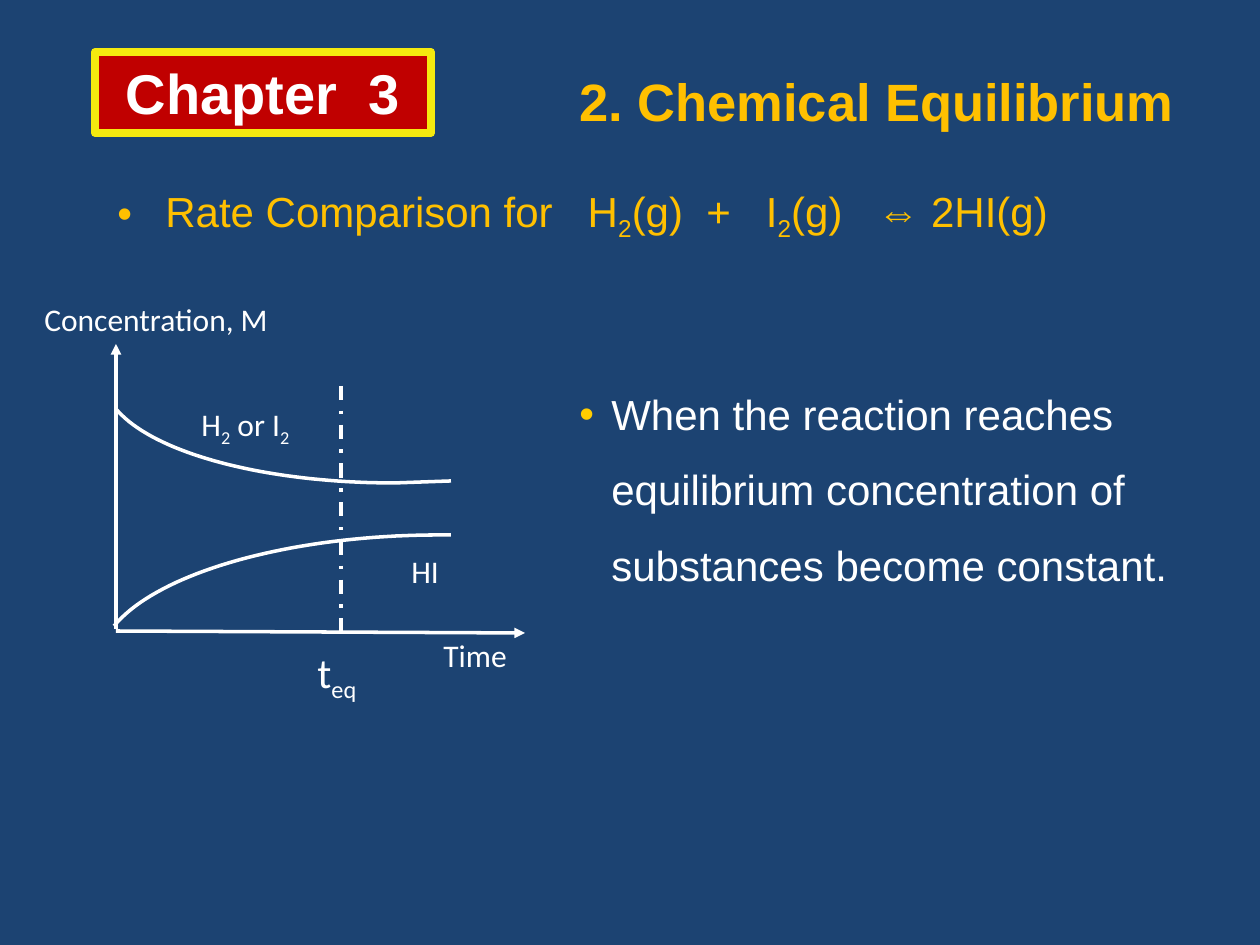
from lxml import etree
from pptx import Presentation
from pptx.dml.color import RGBColor
from pptx.enum.dml import MSO_LINE
from pptx.enum.shapes import MSO_CONNECTOR, MSO_SHAPE
from pptx.enum.text import MSO_ANCHOR, PP_ALIGN
from pptx.oxml.ns import qn
from pptx.util import Pt

PX = 914400 / 126
STRAIGHT = MSO_CONNECTOR.STRAIGHT
RECT = MSO_SHAPE.RECTANGLE
DASH_DOT = MSO_LINE.DASH_DOT
MIDDLE = MSO_ANCHOR.MIDDLE
CENTER = PP_ALIGN.CENTER
COLORS = {
    "navy": "1C4372",
    "red": "C00000",
    "yellow": "F5EA0F",
    "gold": "FFC000",
    "bullet": "FFCC00",
    "white": "FFFFFF",
}
RGB = {name: RGBColor.from_string(value) for name, value in COLORS.items()}


def px(*values):
    return [round(v * PX) for v in values]


def add_runs(p, parts, size, font, color, bold=False):
    for i, part in enumerate(parts):
        r = p.add_run()
        r.text = part
        r.font.size = Pt(size)
        r.font.name = font
        r.font.bold = bold
        r.font.color.rgb = RGB[color]
        if i % 2:
            r.font._element.set("baseline", "-25000")


prs = Presentation()
prs.slide_width, prs.slide_height = px(1260, 945)
s = prs.slides.add_slide(prs.slide_layouts[6])
s.background.fill.solid()
s.background.fill.fore_color.rgb = RGB["navy"]

sp = s.shapes.add_shape(RECT, *px(95, 52, 336, 81))
sp.shadow.inherit = False
sp.fill.solid()
sp.fill.fore_color.rgb = RGB["red"]
sp.line.color.rgb = RGB["yellow"]
sp.line.width = Pt(4.5)
tf = sp.text_frame
tf.vertical_anchor = MIDDLE
p = tf.paragraphs[0]
p.alignment = CENTER
add_runs(p, ["Chapter  3"], 32, "Arial", "white", True)

sp = s.shapes.add_textbox(*px(567, 63, 693, 77))
sp.text_frame.word_wrap = True
add_runs(sp.text_frame.paragraphs[0], ["2. Chemical Equilibrium"], 30, "Arial", "gold", True)

reaction = ["Rate Comparison for   H", "2", "(g)  +   I", "2", "(g)   ⇔ 2HI(g)"]
statement = ["When the reaction reaches equilibrium concentration of substances become constant."]
bullets = [
    ((105, 179, 1071, 105), reaction, "gold", "gold", 48, 1, 4.8),
    ((567, 357, 640, 242), statement, "white", "bullet", 32, 1.5, 0),
]
for box, parts, color, bullet_color, indent, spacing, before in bullets:
    sp = s.shapes.add_textbox(*px(*box))
    tf = sp.text_frame
    tf.word_wrap = True
    p = tf.paragraphs[0]
    p.line_spacing = spacing
    p.space_before = Pt(before)
    pPr = p._p.get_or_add_pPr()
    margin = px(indent)[0]
    pPr.set("marL", str(margin))
    pPr.set("indent", str(-margin))
    buClr = etree.SubElement(pPr, qn("a:buClr"))
    etree.SubElement(buClr, qn("a:srgbClr"), val=COLORS[bullet_color])
    etree.SubElement(pPr, qn("a:buFont"), typeface="Arial")
    etree.SubElement(pPr, qn("a:buChar"), char="•")
    add_runs(p, parts, 24, "Arial", color)

lines = [
    ((116, 631, 525, 633), True),
    ((116, 629, 116, 344), True),
    ((341, 386, 341, 638 - 7), False),
]
for ends, is_axis in lines:
    cxn = s.shapes.add_connector(STRAIGHT, *px(*ends))
    cxn.line.color.rgb = RGB["white"]
    cxn.line.width = Pt(2)
    if is_axis:
        etree.SubElement(cxn.line._get_or_add_ln(), qn("a:tailEnd"), type="triangle")
    else:
        cxn.line.dash_style = DASH_DOT
    etree.SubElement(cxn._element.spPr, qn("a:effectLst"))

STEPS = 40
curves = [
    ([(114, 626), (159, 572), (291, 535), (440, 535)], (451, 535)),
    ([(116, 409), (154, 454), (267, 483), (394, 483)], (451, 481)),
]
for controls, end in curves:
    points = []
    for i in range(STEPS + 1):
        t = i / STEPS
        weights = ((1 - t) ** 3, 3 * t * (1 - t) ** 2, 3 * t**2 * (1 - t), t**3)
        points.append(px(*(sum(w * c for w, c in zip(weights, axis)) for axis in zip(*controls))))
    points.append(px(*end))
    fb = s.shapes.build_freeform(*points[0])
    fb.add_line_segments(points[1:], close=False)
    sp = fb.convert_to_shape()
    sp.shadow.inherit = False
    sp.fill.background()
    sp.line.color.rgb = RGB["white"]
    sp.line.width = Pt(2)

labels = [
    ((32, 294, 252, 50), ["Concentration, M"], 18),
    ((431, 630, 89, 50), ["Time"], 18),
    ((189, 399, 117, 50), ["H", "2", " or I", "2"], 18),
    ((399, 546, 53, 50), ["HI"], 18),
    ((305, 640, 68, 63), ["t", "eq"], 24),
]
for box, parts, size in labels:
    sp = s.shapes.add_textbox(*px(*box))
    sp.text_frame.word_wrap = False
    add_runs(sp.text_frame.paragraphs[0], parts, size, "Calibri", "white")

prs.save("out.pptx")
